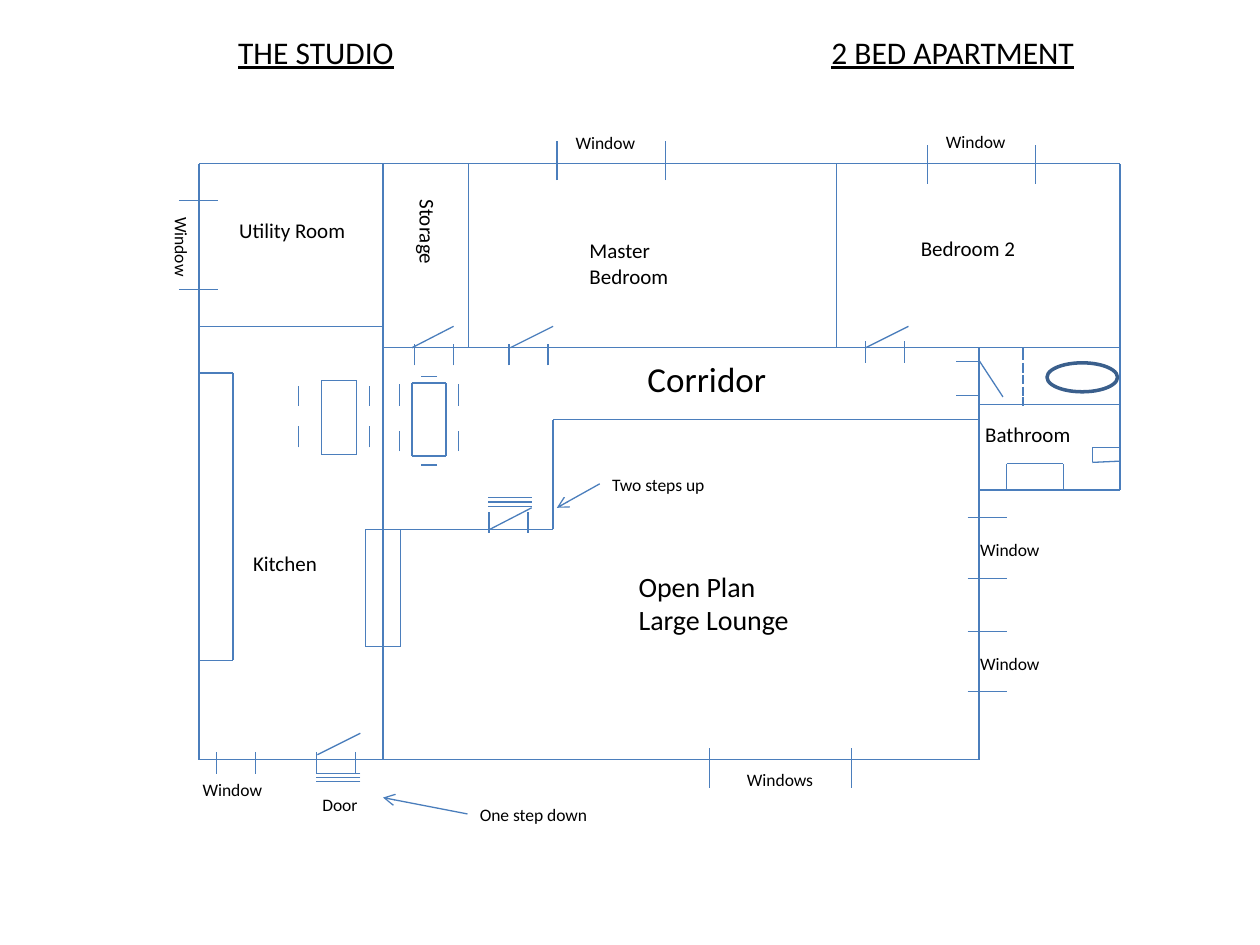
from typing import NamedTuple

from lxml.etree import SubElement
from pptx import Presentation
from pptx.dml.color import RGBColor
from pptx.enum.shapes import MSO_CONNECTOR, MSO_SHAPE
from pptx.enum.text import MSO_ANCHOR, MSO_AUTO_SIZE, PP_ALIGN
from pptx.oxml.ns import qn
from pptx.util import Inches, Pt

WALL = "4B7EBC"
BATH = "3A5F8C"
INK = "000000"
WHITE = "FFFFFF"
LEFT, RIGHT, TOP, BOTTOM = 1.58, 8.89, 1.3, 6.03
KITCHEN_X, LOUNGE_X, CORRIDOR_Y = 3.04, 7.77, 2.76


class Line(NamedTuple):
    x1: float
    y1: float
    x2: float
    y2: float


class Ticks(NamedTuple):
    start: float
    end: float
    low: float
    high: float


class Box(NamedTuple):
    left: float
    top: float
    right: float
    bottom: float


class Label(NamedTuple):
    text: str
    left: float
    top: float
    width: float
    height: float
    size: int = 10
    rotation: int = 0


WALLS = [
    Line(LEFT, TOP, RIGHT, TOP),
    Line(LEFT, TOP, LEFT, BOTTOM),
    Line(LEFT, BOTTOM, LOUNGE_X, BOTTOM),
    Line(RIGHT, TOP, RIGHT, 3.89),
    Line(LOUNGE_X, 3.89, LOUNGE_X, BOTTOM),
    Line(LOUNGE_X, 3.89, RIGHT, 3.89),
    Line(KITCHEN_X, 2.59, KITCHEN_X, TOP),
    Line(LEFT, 2.59, KITCHEN_X, 2.59),
    Line(KITCHEN_X, BOTTOM, KITCHEN_X, 2.37),
    Line(3.72, CORRIDOR_Y, 3.72, TOP),
    Line(KITCHEN_X, CORRIDOR_Y, RIGHT, CORRIDOR_Y),
    Line(6.64, CORRIDOR_Y, 6.64, TOP),
    Line(4.39, 4.2, KITCHEN_X, 4.2),
    Line(4.39, 4.2, 4.39, 3.33),
    Line(LOUNGE_X, 4.2, LOUNGE_X, CORRIDOR_Y),
    Line(LOUNGE_X, 3.33, 4.39, 3.33),
    Line(RIGHT, 3.21, LOUNGE_X, 3.21),
]
DOOR_SWINGS = [
    Line(3.27, 2.76, 3.6, 2.59),
    Line(4.05, 2.76, 4.39, 2.59),
    Line(6.87, 2.76, 7.21, 2.59),
    Line(2.52, 5.99, 2.86, 5.82),
    Line(3.89, 4.2, 4.22, 4.03),
    Line(7.77, 2.86, 7.96, 3.15),
]
BATHROOM_FITTINGS = [
    Line(7.99, 3.89, 7.99, 3.68),
    Line(8.44, 3.89, 8.44, 3.68),
    Line(7.99, 3.68, 8.44, 3.68),
    Line(8.67, 3.55, RIGHT, 3.55),
    Line(8.67, 3.67, RIGHT, 3.66),
    Line(8.67, 3.67, 8.67, 3.55),
]
SHOWER_SCREEN = [
    Line(8.12, y1, 8.12, y2)
    for y1, y2 in [(2.76, 2.86), (2.88, 2.96), (2.98, 3.05), (3.07, 3.14), (3.15, 3.22)]
]
STEPS = [Line(2.86, y, 2.51, y) for y in (6.14, 6.17, 6.2)] + [
    Line(4.22, y, 3.87, y) for y in (3.95, 3.98, 3.99, 4.02)
]
END_CHAIRS = [Line(3.47, y, 3.34, y) for y in (2.99, 3.69)]
UPRIGHT_TICKS = [
    Ticks(2.37, 2.93, 3.06, 3.22),
    Ticks(2.37, 2.93, 3.38, 3.55),
    Ticks(3.17, 3.64, 3.05, 3.22),
    Ticks(3.17, 3.64, 3.42, 3.58),
    Ticks(1.72, 2.03, 5.97, 6.14),
    Ticks(2.51, 2.82, 5.97, 6.14),
    Ticks(5.63, 6.76, 5.94, 6.25),
    Ticks(7.36, 8.22, 1.15, 1.46),
    Ticks(4.42, 5.28, 1.12, 1.43),
    Ticks(6.87, 7.18, 2.71, 2.88),
    Ticks(4.04, 4.35, 2.73, 2.9),
    Ticks(3.29, 3.6, 2.73, 2.9),
    Ticks(3.88, 4.19, 4.06, 4.23),
]
LEVEL_TICKS = [
    Ticks(4.11, 4.59, 7.68, 7.99),
    Ticks(5.01, 5.49, 7.68, 7.99),
    Ticks(1.59, 2.3, 1.42, 1.73),
    Ticks(2.87, 3.14, 7.59, 7.77),
]
TABLES_AND_COUNTERS = [
    Box(2.55, 3.02, 2.83, 3.61),
    Box(3.27, 3.04, 3.54, 3.62),
    Box(2.9, 4.2, 3.18, 5.13),
    Box(LEFT, 2.96, 1.85, 5.24),
]
ARROWS = [Line(4.76, 3.84, 4.42, 4.03), Line(3.71, 6.46, 3.04, 6.33)]
STUDIO = Label("THE STUDIO", 1.79, 0.21, 1.55, 0.4, 18)
APARTMENT = Label("2 BED APARTMENT", 6.5, 0.21, 2.13, 0.4, 18)
LABELS = [
    Label("Storage", 2.87, 1.86, 1.05, 0.3, 12, 90),
    Label("Utility Room", 1.8, 1.68, 1.05, 0.3, 12),
    Label("Window", 7.68, 4.23, 0.77, 0.28),
    Label("Window", 7.68, 5.13, 0.77, 0.28),
    Label("Windows", 5.83, 6.05, 0.95, 0.28),
    Label("Window", 1.51, 6.13, 0.77, 0.28),
    Label("Door", 2.46, 6.25, 0.77, 0.28),
    Label("Two steps up", 4.76, 3.71, 0.96, 0.27),
    Label("Corridor", 5.04, 2.79, 1.24, 0.44, 20),
    Label("Master Bedroom", 4.58, 1.84, 1.05, 0.5, 12),
    Label("Bedroom 2", 7.21, 1.82, 1.18, 0.3, 12),
    Label("Window", 7.41, 0.99, 0.77, 0.28),
    Label("Window", 4.47, 1, 0.77, 0.28),
    Label("Open Plan\nLarge Lounge", 4.97, 4.47, 1.44, 0.64, 16),
    Label("Kitchen", 1.91, 4.32, 1.18, 0.3, 12),
    Label("Bathroom", 7.72, 3.3, 1.18, 0.3, 12),
    Label("Window", 1.05, 1.87, 0.77, 0.28, 10, 90),
    Label("One step down", 3.71, 6.33, 1.26, 0.27),
]


def paint(fmt, color: str) -> None:
    fmt.solid()
    fmt.fore_color.rgb = RGBColor.from_string(color)


def draw_line(s, line: Line, arrow: bool = False) -> None:
    ends = [Inches(v) for v in line]
    sp = s.shapes.add_connector(MSO_CONNECTOR.STRAIGHT, *ends)
    paint(sp.line.fill, WALL)
    sp.line.width = Pt(0.75)
    if arrow:
        SubElement(sp.line._get_or_add_ln(), qn("a:tailEnd"), type="arrow")
    SubElement(sp._element.spPr, qn("a:effectLst"))


def draw_box(s, box: Box) -> None:
    for y in (box.top, box.bottom):
        draw_line(s, Line(box.left, y, box.right, y))
    for x in (box.left, box.right):
        draw_line(s, Line(x, box.top, x, box.bottom))


def write_label(sp, label: Label, underline: bool = False) -> None:
    sp.left, sp.top, sp.width, sp.height = [Inches(v) for v in label[1:5]]
    sp.rotation = label.rotation
    tf = sp.text_frame
    tf.text = label.text
    tf.word_wrap = True
    tf.auto_size = MSO_AUTO_SIZE.SHAPE_TO_FIT_TEXT
    tf.vertical_anchor = MSO_ANCHOR.TOP
    for p in tf.paragraphs:
        p.alignment = PP_ALIGN.LEFT
        for r in p.runs:
            r.font.name = "Calibri"
            r.font.size = Pt(label.size)
            r.font.underline = underline or None
            paint(r.font.fill, INK)


def add_label(s, label: Label, underline: bool = False) -> None:
    write_label(s.shapes.add_textbox(0, 0, 0, 0), label, underline)


def add_bath(s) -> None:
    sp = s.shapes.add_shape(
        MSO_SHAPE.OVAL, Inches(8.31), Inches(2.88), Inches(0.56), Inches(0.23)
    )
    sp.shadow.inherit = False
    paint(sp.fill, WHITE)
    paint(sp.line.fill, BATH)
    sp.line.width = Pt(2)


def main() -> None:
    prs = Presentation()
    prs.slide_width, prs.slide_height = Inches(10), Inches(7.5)
    s = prs.slides.add_slide(prs.slide_layouts[5])
    write_label(s.shapes.title, STUDIO, underline=True)
    add_label(s, APARTMENT, underline=True)
    for line in WALLS + DOOR_SWINGS + BATHROOM_FITTINGS + SHOWER_SCREEN + STEPS + END_CHAIRS:
        draw_line(s, line)
    for t in UPRIGHT_TICKS:
        for x in (t.start, t.end):
            draw_line(s, Line(x, t.high, x, t.low))
    for t in LEVEL_TICKS:
        for y in (t.start, t.end):
            draw_line(s, Line(t.low, y, t.high, y))
    for box in TABLES_AND_COUNTERS:
        draw_box(s, box)
    for arrow in ARROWS:
        draw_line(s, arrow, arrow=True)
    add_bath(s)
    for label in LABELS:
        add_label(s, label)
    prs.save("out.pptx")


if __name__ == "__main__":
    main()
